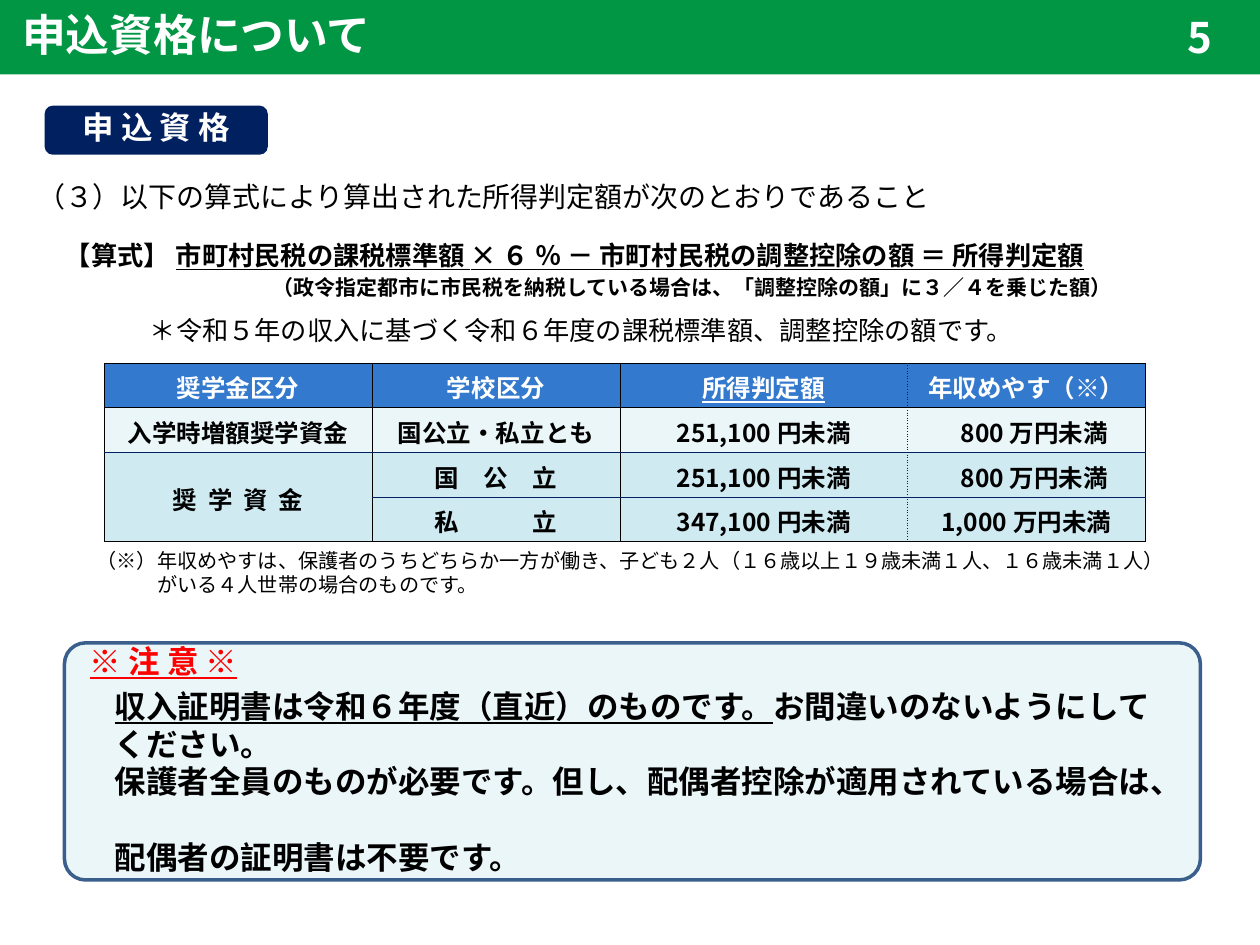
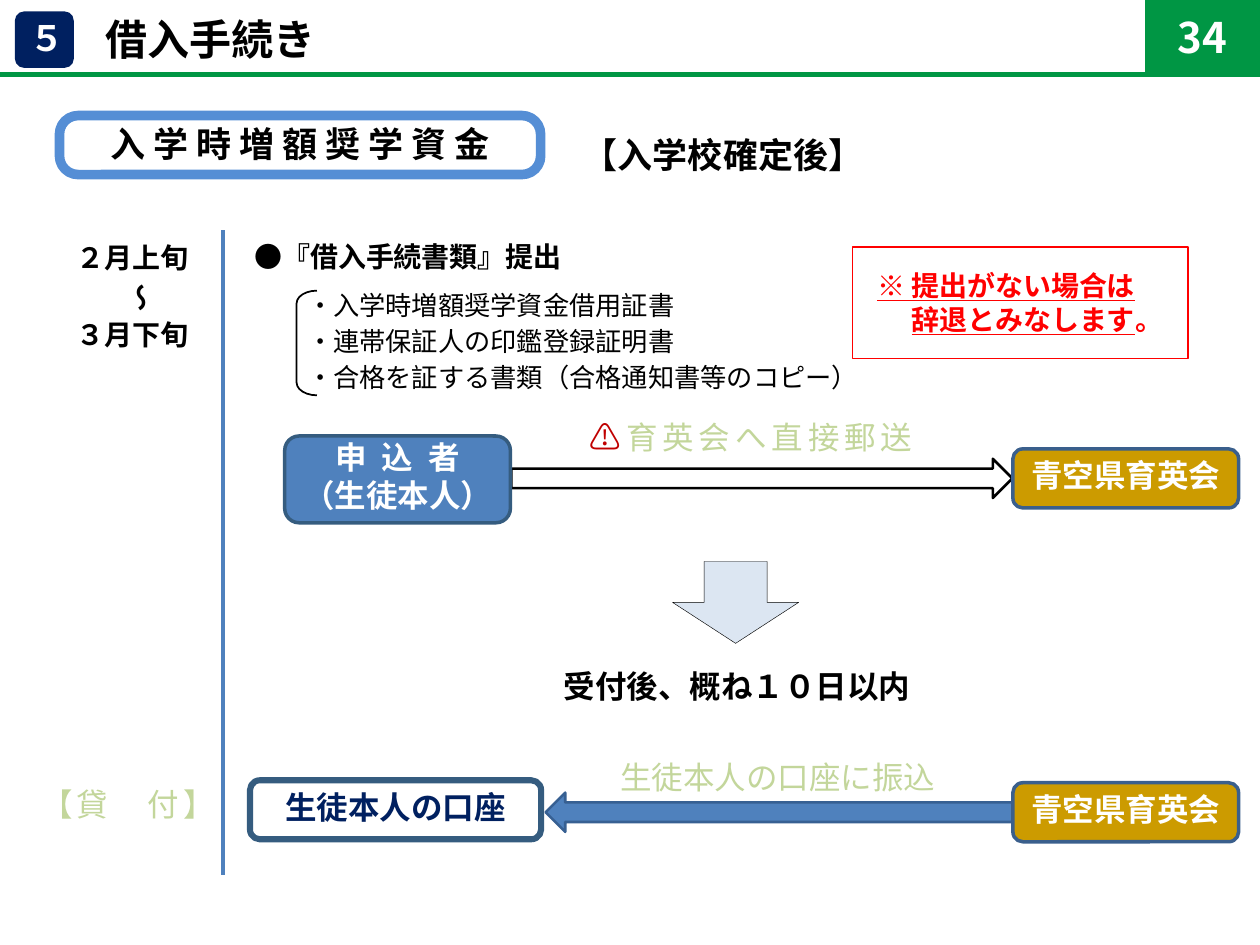
from dataclasses import dataclass

from lxml import etree
from pptx import Presentation
from pptx.dml.color import RGBColor
from pptx.enum.shapes import MSO_CONNECTOR as Connector, MSO_SHAPE as Preset
from pptx.enum.text import MSO_ANCHOR as Anchor, PP_ALIGN as Align
from pptx.oxml.ns import qn
from pptx.util import Cm, Pt


@dataclass(frozen=True)
class Theme:
    font: str = "Noto Sans CJK JP"
    line_ratio: float = 1.2
    black: str = "000000"
    white: str = "FFFFFF"
    green: str = "009644"
    navy: str = "002060"
    red: str = "FF0000"
    warning: str = "C00000"
    gold: str = "CC9B00"
    blue: str = "4F81BD"
    blue_edge: str = "376092"
    steel: str = "355C7F"
    edge: str = "3A5F8C"
    capsule: str = "558ED5"
    pale_blue: str = "DCE6F2"
    pale_green: str = "C3D69B"
    table_head: str = "3379CD"
    light: str = "EBF6F9"
    band: str = "CFEAF1"
    banner: float = 25
    title: float = 24
    heading: float = 20
    label: float = 18
    body: float = 16
    detail: float = 15
    cell: float = 14
    remark: float = 12
    note: float = 11.5


THEME = Theme()


@dataclass
class Para:
    """One paragraph: spans are (text, style overrides); indent in cm, before in points."""
    spans: list
    indent: float = 0
    before: float = 0


def rgb(value):
    return RGBColor.from_string(value)


def plain(text, indent=0, before=0, **style):
    return Para([(text, style)], indent, before)


def add_span(para, text, size, color, bold=False, underline=False, spacing=0):
    span = para.add_run()
    span.text = text
    font = span.font
    font.name, font.size, font.bold = THEME.font, Pt(size), bold
    font.underline = underline
    font.color.rgb = rgb(color)
    props = font._element
    if spacing:
        props.set("spc", str(round(spacing * 100)))
    etree.SubElement(props, qn("a:ea")).set("typeface", THEME.font)


def write(frame, content, align=Align.LEFT, **style):
    """Fill a text frame with a string or a list of Para."""
    style = {"size": THEME.body, "color": THEME.black, **style}
    paras = [plain(content)] if isinstance(content, str) else content
    for index, item in enumerate(paras):
        para = frame.add_paragraph() if index else frame.paragraphs[0]
        para.alignment = align
        para.space_before = Pt(item.before)
        spans = [(text, {**style, **own}) for text, own in item.spans]
        para.line_spacing = Pt(THEME.line_ratio * max(own["size"] for _, own in spans))
        if item.indent:
            props = para._p.get_or_add_pPr()
            props.set("marL", str(Cm(item.indent)))
            props.set("indent", "0")
        for text, own in spans:
            add_span(para, text, **own)


def set_frame(frame, anchor, insets):
    frame.word_wrap = True
    frame.vertical_anchor = anchor
    left, top, right, bottom = (Cm(inset) for inset in insets)
    frame.margin_left, frame.margin_top = left, top
    frame.margin_right, frame.margin_bottom = right, bottom


def add_text(page, at, content, anchor=Anchor.TOP, **style):
    box = page.shapes.add_textbox(*(Cm(length) for length in at))
    set_frame(box.text_frame, anchor, (.25, .13, .25, .13))
    write(box.text_frame, content, **style)
    return box


def add_box(page, preset, at, fill=None, line=None, width=0, adjust=None, content=None,
            insets=(.25, 0, .25, .13), align=Align.CENTER, **style):
    box = page.shapes.add_shape(preset, *(Cm(length) for length in at))
    box.shadow.inherit = False
    if fill:
        box.fill.solid()
        box.fill.fore_color.rgb = rgb(fill)
    else:
        box.fill.background()
    if line:
        box.line.color.rgb = rgb(line)
        box.line.width = Pt(width)
    else:
        box.line.fill.background()
    if adjust is not None:
        box.adjustments[0] = adjust
    if content:
        set_frame(box.text_frame, Anchor.MIDDLE, insets)
        write(box.text_frame, content, align, **style)
    return box


def add_rule(page, start, end, color, width):
    rule = page.shapes.add_connector(Connector.STRAIGHT, *(Cm(v) for v in (*start, *end)))
    rule.line.color.rgb = rgb(color)
    rule.line.width = Pt(width)
    etree.SubElement(rule._element.spPr, qn("a:effectLst"))


def add_page_number(page, at, number, line=None):
    add_box(page, Preset.RECTANGLE, at, THEME.green, line, 3, content=number,
            insets=(.25, .13, .25, .13), size=THEME.title, color=THEME.white, bold=True)


def add_foundation(page, top):
    add_box(page, Preset.ROUNDED_RECTANGLE, (20.42, top, 4.55, 1.19), THEME.gold,
            THEME.edge, 2, content="青空県育英会", size=THEME.label,
            color=THEME.white, bold=True)


def set_borders(cell, sides):
    """Draw cell borders; sides maps L, R, T, B to (colour, points, dash)."""
    props = cell._tc.get_or_add_tcPr()
    for index, side in enumerate("LRTB"):
        color, width, dash = sides[side]
        line = etree.Element(qn(f"a:ln{side}"), w=str(Pt(width)))
        fill = etree.SubElement(line, qn("a:solidFill"))
        etree.SubElement(fill, qn("a:srgbClr")).set("val", color)
        etree.SubElement(line, qn("a:prstDash")).set("val", dash)
        props.insert(index, line)


def add_income_table(page):
    rows = [
        ["奨学金区分", "学校区分", [plain("所得判定額", underline=True)], "年収めやす（※）"],
        ["入学時増額奨学資金", "国公立・私立とも", "251,100 円未満",
         [plain("800 万円未満", indent=.33)]],
        [[plain("奨 学 資 金", spacing=1.5)], "国　公　立", "251,100 円未満",
         [plain("800 万円未満", indent=.33)]],
        [None, [Para([("私", {"spacing": 42}), ("立", {})])], "347,100 円未満",
         "1,000 万円未満"],
    ]
    fills = [THEME.table_head, THEME.light, THEME.band, THEME.band]
    solid = (THEME.black, .5, "solid")
    dotted = (THEME.navy, .75, "sysDot")
    across = [solid, solid, (THEME.navy, 1, "solid"), (THEME.navy, .5, "solid"), solid]
    down = [solid, solid, solid, dotted, solid]

    frame = page.shapes.add_table(4, 4, Cm(2.1), Cm(7.32), Cm(21), Cm(3.6))
    table = frame.table
    for column, width in zip(table.columns, (5.4, 5, 5.79, 4.8)):
        column.width = Cm(width)
    for row in table.rows:
        row.height = Cm(.9)
    table.cell(2, 0).merge(table.cell(3, 0))
    for r, row in enumerate(rows):
        for c, content in enumerate(row):
            cell = table.cell(r, c)
            cell.fill.solid()
            cell.fill.fore_color.rgb = rgb(fills[r])
            cell.vertical_anchor = Anchor.MIDDLE
            cell.margin_top, cell.margin_bottom = Cm(.23), Cm(.03)
            if content:
                write(cell.text_frame, content, Align.CENTER, size=THEME.cell, bold=True,
                      color=THEME.black if r else THEME.white)
            bottom = across[4] if (r, c) == (2, 0) else across[r + 1]
            set_borders(cell, {"L": down[c], "R": down[c + 1], "T": across[r], "B": bottom})


def build_eligibility(page):
    add_box(page, Preset.RECTANGLE, (0, 0, 25.4, 1.5), THEME.green,
            content="申込資格について", insets=(.45, .02, .25, .13), align=Align.LEFT,
            size=THEME.banner, color=THEME.white, bold=True)
    add_box(page, Preset.ROUNDED_RECTANGLE, (.9, 2.13, 4.5, .99), THEME.navy,
            content="申 込 資 格", size=THEME.label, color=THEME.white, bold=True)
    formula = "市町村民税の課税標準額 × ６ ％ － 市町村民税の調整控除の額 ＝ 所得判定額"
    strong = {"size": THEME.detail, "bold": True}
    add_text(page, (.5, 3.5, 24.2, 5), [
        plain("（３）以下の算式により算出された所得判定額が次のとおりであること"),
        Para([("【算式】 ", strong), (formula, {**strong, "underline": True})], .56, 14.5),
        plain("（政令指定都市に市民税を納税している場合は、「調整控除の額」に３／４を乗じた額）",
              4.75, 2, size=THEME.remark, bold=True),
        plain("＊令和５年の収入に基づく令和６年度の課税標準額、調整控除の額です。",
              2.27, 8.5, size=THEME.detail),
    ])
    add_text(page, (1.7, 10.93, 22.5, 1.24), [
        plain("（※）年収めやすは、保護者のうちどちらか一方が働き、子ども２人"
              "（１６歳以上１９歳未満１人、１６歳未満１人）"),
        plain("がいる４人世帯の場合のものです。", 1.22),
    ], size=THEME.note)
    add_income_table(page)
    add_box(page, Preset.ROUNDED_RECTANGLE, (1.3, 12.96, 22.9, 4.78), THEME.light,
            THEME.edge, 2, .089, [
                plain("※ 注 意 ※", .14, color=THEME.red, underline=True),
                Para([("収入証明書は令和６年度（直近）のものです。", {"underline": True}),
                      ("お間違いのないようにして", {})], .64, 4),
                plain("ください。", .64),
                plain("保護者全員のものが必要です。但し、配偶者控除が適用されている場合は、", .64),
                plain("配偶者の証明書は不要です。", .64, 21.6),
            ], (.25, 0, 0, .1), Align.LEFT, size=THEME.label, bold=True)
    add_page_number(page, (23.09, .1, 2.21, 1.27), "5")


def build_procedure(page):
    rounded = Preset.ROUNDED_RECTANGLE
    add_box(page, rounded, (.3, .23, 1.19, 1.14), THEME.navy, content="５",
            insets=(.25, .05, .25, .13), size=THEME.heading, color=THEME.white, bold=True)
    add_text(page, (1.88, .16, 11.02, 1.24), "借入手続き", Anchor.MIDDLE,
             size=THEME.title, bold=True)
    add_rule(page, (0, 1.5), (25.4, 1.5), THEME.green, 3)
    add_box(page, rounded, (1.2, 2.33, 9.7, 1.19), THEME.white, THEME.capsule, 5.5, .316,
            "入 学 時 増 額 奨 学 資 金", (.25, .08, .25, .13), size=THEME.heading, bold=True)
    add_text(page, (11.5, 2.3, 7.9, 1.63), "【入学校確定後】", Anchor.MIDDLE,
             size=THEME.heading, bold=True)
    add_page_number(page, (23.14, 0, 2.21, 1.5), "34", THEME.green)

    add_rule(page, (4.5, 4.64), (4.5, 17.64), THEME.blue, 2.25)
    for top, period in ((4.72, "２月上旬"), (6.27, "３月下旬")):
        add_text(page, (1.3, top, 3.2, .94), period, bold=True)
    tilde = add_text(page, (1.55, 5.59, 1.88, 1.04), "～", align=Align.CENTER, bold=True)
    tilde.text_frame._txBody.bodyPr.set("vert", "eaVert")

    add_text(page, (4.88, 4.7, 8.92, 1.24), "●『借入手続書類』提出", bold=True)
    add_box(page, Preset.LEFT_BRACKET, (5.98, 5.86, .41, 2.11), None, THEME.black, 1, .623)
    add_text(page, (5.94, 5.7, 12.34, 2.79), [
        plain("・入学時増額奨学資金借用証書"),
        plain("・連帯保証人の印鑑登録証明書", before=2.5),
        plain("・合格を証する書類（合格通知書等のコピー）", before=2.5),
    ], size=THEME.detail)
    add_box(page, Preset.RECTANGLE, (17.19, 4.98, 6.76, 2.25), None, THEME.red, .75, None, [
        plain("※ 提出がない場合は", .25, underline=True),
        Para([("辞退とみなします", {"underline": True}), ("。", {})], .94),
    ], (.25, .1, .25, .13), Align.LEFT, color=THEME.red, bold=True)

    add_box(page, Preset.RIGHT_ARROW, (10.31, 9.25, 10.1, .79), THEME.white, THEME.black, 1.5)
    add_box(page, rounded, (5.74, 8.79, 4.55, 1.75), THEME.blue, THEME.steel, 2, None,
            [plain("申 込 者", spacing=2.2), plain("（生徒本人）")],
            size=THEME.label, color=THEME.white, bold=True)
    add_box(page, Preset.DOWN_ARROW, (13.56, 11.32, 2.54, 1.65), THEME.pale_blue,
            THEME.black, .25)
    add_text(page, (10.41, 13.31, 8.89, 1.02), "受付後、概ね１０日以内",
             align=Align.CENTER, size=THEME.label, bold=True)

    add_box(page, rounded, (5.04, 15.73, 5.87, 1.19), None, THEME.steel, 3.5,
            content="生徒本人の口座", size=THEME.label, color=THEME.navy, bold=True)
    add_box(page, Preset.LEFT_ARROW, (11, 15.98, 10.08, .79), THEME.blue, THEME.blue_edge, 1.5)
    for top in (9.05, 15.78):
        add_foundation(page, top)
    mailing = Para([("⚠", {"color": THEME.warning, "spacing": 2.8}),
                    ("育英会へ直接郵送", {"spacing": 2.8})])
    for at, label in (((11.64, 8.29, 8, 1.02), mailing),
                      ((12.25, 15.15, 7, 1.02), plain("生徒本人の口座に振込")),
                      ((.58, 15.7, 4, 1.02), plain("【貸　付】", spacing=2.3))):
        add_text(page, at, [label], Anchor.MIDDLE, size=THEME.label, color=THEME.pale_green)


def main():
    deck = Presentation()
    deck.slide_width, deck.slide_height = Cm(25.4), Cm(19.05)
    for build in (build_eligibility, build_procedure):
        build(deck.slides.add_slide(deck.slide_layouts[6]))
    deck.save("out.pptx")


if __name__ == "__main__":
    main()
